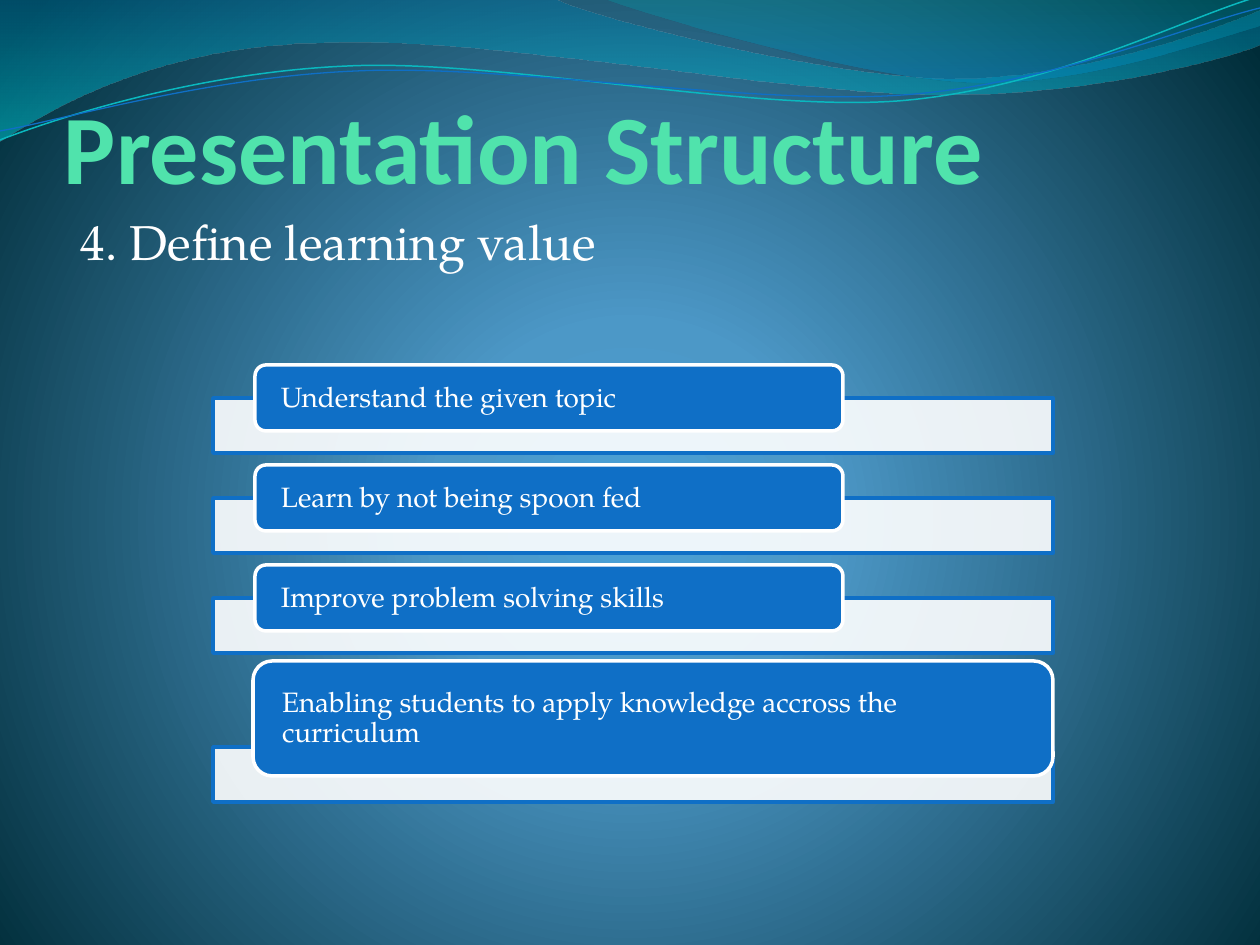
from math import cos, radians, sin

from lxml.etree import SubElement
from pptx import Presentation
from pptx.dml.color import RGBColor
from pptx.enum.shapes import MSO_SHAPE
from pptx.enum.text import MSO_ANCHOR
from pptx.oxml import parse_xml
from pptx.oxml.ns import nsdecls, qn
from pptx.util import Pt

SCALE = 914400 / 126  # EMU per px
BODY_FONT = "TeX Gyre Pagella"
COLORS = {"blue": "0F6FC6", "white": "FFFFFF", "mint": "50E3AC", "cyan": "0AB8BF"}

TITLE = "Presentation Structure"
SUBTITLE = "4. Define learning value"

# text, bar top, label box (left, top, width, height)
ROWS = [
    ("Understand the given topic", 398, (255, 365, 588, 66)),
    ("Learn by not being spoon fed", 498, (255, 465, 588, 66)),
    ("Improve problem solving skills", 598, (255, 565, 588, 66)),
    ("Enabling students to apply knowledge accross the curriculum", 747,
     (253, 661, 800, 115)),
]
BAR_LEFT, BAR_WIDTH, BAR_HEIGHT = 213, 840, 55
CORNER_INSET = 0.05  # share of a label's height that its round corners take
TEXT_MARGIN = 23

# Gradient stops: position %, colour, opacity %
BACKGROUND = [(0, "4AA0D6", 100), (25, "4C98C7", 100), (100, "002C38", 100)]
CIRCLE = ('<a:path path="circle"><a:fillToRect l="10000" t="110000" '
          'r="10000" b="100000"/></a:path>')
DOWNWARD = '<a:lin ang="5400000" scaled="0"/>'

# Box, then outline: a start point, then lines (x, y) and cubic curves (two controls, end)
WAVES = [
    ((-1, -1, 1263, 144),
     [(0, 0), (554, -1), (600, 21, 837, 79, 955, 79), (1075, 79, 1207, 33, 1260, 11),
      (1261, 45), (1239, 55, 1096, 96, 940, 95), (784, 95, 481, 35, 324, 43),
      (163, 45, 58, 105, -1, 142), (0, 0)],
     [(0, "0074A1", 45), (100, "00C6CF", 55)]),
    ((604, -1, 656, 88),
     [(604, -1), (641, 14, 859, 78, 969, 82), (1079, 87, 1211, 40, 1260, 26),
      (1260, 0), (604, -1)],
     [(0, "00A1A9", 30), (80, "008BBF", 45)]),
]
RIBBON_ANGLE = -2.7
RIBBONS = [
    ((-3, 28, 1263, 89),
     [(0, 140), (60, 117, 199, 72, 349, 66), (498, 59, 747, 112, 898, 101),
      (1050, 89, 1182, 19, 1257, -3)], "cyan", 0.85),
    ((-3, 38, 1264, 73),
     [(0, 131), (59, 121, 207, 77, 357, 71), (508, 64, 752, 106, 903, 95),
      (1053, 84, 1186, 26, 1260, 8)], "blue", 0.75),
]


def px(length):
    return round(length * SCALE)


def color(name):
    return RGBColor.from_string(COLORS[name])


def paint_gradient(element, stops, direction):
    """Replace the first solid fill inside the element by a gradient."""
    stop_xml = "".join(
        f'<a:gs pos="{position * 1000}"><a:srgbClr val="{value}">'
        f'<a:alpha val="{opacity * 1000}"/></a:srgbClr></a:gs>'
        for position, value, opacity in stops)
    gradient = parse_xml(f'<a:gradFill {nsdecls("a")} rotWithShape="1">'
                         f'<a:gsLst>{stop_xml}</a:gsLst>{direction}</a:gradFill>')
    solid = element.find(f'.//{qn("a:solidFill")}')
    solid.getparent().replace(solid, gradient)


def add_outline(slide, box, outline, closed, angle=0):
    """Add a freeform with true curves; the outline is given as seen after rotation."""
    left, top, width, height = box
    center_x, center_y = left + width / 2, top + height / 2
    cosine, sine = cos(radians(-angle)), sin(radians(-angle))

    def point_xml(x, y):
        dx, dy = x - center_x, y - center_y
        local_x = width / 2 + dx * cosine - dy * sine
        local_y = height / 2 + dx * sine + dy * cosine
        return f'<a:pt x="{px(local_x)}" y="{px(local_y)}"/>'

    def segment_xml(tag, numbers):
        points = "".join(map(point_xml, numbers[::2], numbers[1::2]))
        return f"<a:{tag}>{points}</a:{tag}>"

    segments = segment_xml("moveTo", outline[0]) + "".join(
        segment_xml("lnTo" if len(numbers) == 2 else "cubicBezTo", numbers)
        for numbers in outline[1:])
    curves = parse_xml(
        f'<a:pathLst {nsdecls("a")}><a:path w="{px(width)}" h="{px(height)}">'
        f'{segments}{"<a:close/>" if closed else ""}</a:path></a:pathLst>')

    builder = slide.shapes.build_freeform(px(left), px(top), scale=1.0)
    builder.add_line_segments([(px(left + width), px(top + height))], close=closed)
    shape = builder.convert_to_shape()
    straight = shape.element.find(f'.//{qn("a:pathLst")}')
    straight.getparent().replace(straight, curves)
    shape.rotation = angle
    shape.shadow.inherit = False
    return shape


def add_box(slide, kind, box, fill, line):
    shape = slide.shapes.add_shape(kind, *map(px, box))
    shape.shadow.inherit = False
    shape.fill.solid()
    shape.fill.fore_color.rgb = color(fill)
    shape.line.color.rgb = color(line)
    shape.line.width = Pt(2)
    return shape


def add_text(slide, box, text, size, font_name, font_color, margins, anchor):
    """Write one paragraph; margins are (horizontal, vertical)."""
    frame = slide.shapes.add_textbox(*map(px, box)).text_frame
    frame.word_wrap = True
    frame.vertical_anchor = anchor
    frame.margin_left = frame.margin_right = px(margins[0])
    frame.margin_top = frame.margin_bottom = px(margins[1])
    paragraph = frame.paragraphs[0]
    paragraph.text = text
    paragraph.font.size = Pt(size)
    paragraph.font.name = font_name
    paragraph.font.color.rgb = color(font_color)
    return paragraph


def add_row(slide, text, bar_top, label_box):
    bar = add_box(slide, MSO_SHAPE.RECTANGLE,
                  (BAR_LEFT, bar_top, BAR_WIDTH, BAR_HEIGHT), "white", "blue")
    fill_color = bar.element.find(f'.//{qn("a:solidFill")}/{qn("a:srgbClr")}')
    SubElement(fill_color, qn("a:alpha")).set("val", "90000")
    add_box(slide, MSO_SHAPE.ROUNDED_RECTANGLE, label_box, "blue", "white")
    left, top, width, height = label_box
    inset = round(height * CORNER_INSET)
    text_box = (left + inset, top + inset, width - 2 * inset, height - 2 * inset)
    paragraph = add_text(slide, text_box, text, 16, BODY_FONT, "white",
                         (TEXT_MARGIN, 0), MSO_ANCHOR.MIDDLE)
    paragraph.line_spacing = 0.9


def main():
    presentation = Presentation()
    presentation.slide_width, presentation.slide_height = px(1260), px(945)
    slide = presentation.slides.add_slide(presentation.slide_layouts[6])
    slide.background.fill.solid()
    paint_gradient(slide.element, BACKGROUND, CIRCLE)

    for box, outline, stops in WAVES:
        wave = add_outline(slide, box, outline, closed=True)
        wave.fill.solid()
        wave.line.fill.background()
        paint_gradient(wave.element, stops, DOWNWARD)
    for box, outline, line_color, width in RIBBONS:
        ribbon = add_outline(slide, box, outline, closed=False, angle=RIBBON_ANGLE)
        ribbon.fill.background()
        ribbon.line.color.rgb = color(line_color)
        ribbon.line.width = Pt(width)

    title = add_text(slide, (64, 16, 1071, 188), TITLE, 56, "Calibri", "mint",
                     (0, 0), MSO_ANCHOR.BOTTOM)
    title.font.bold = True
    subtitle = add_text(slide, (75, 205, 1071, 208), SUBTITLE, 28, BODY_FONT, "white",
                        (6, 6), MSO_ANCHOR.TOP)
    subtitle.space_before = Pt(5.6)

    for row in ROWS:
        add_row(slide, *row)
    presentation.save("out.pptx")


if __name__ == "__main__":
    main()
